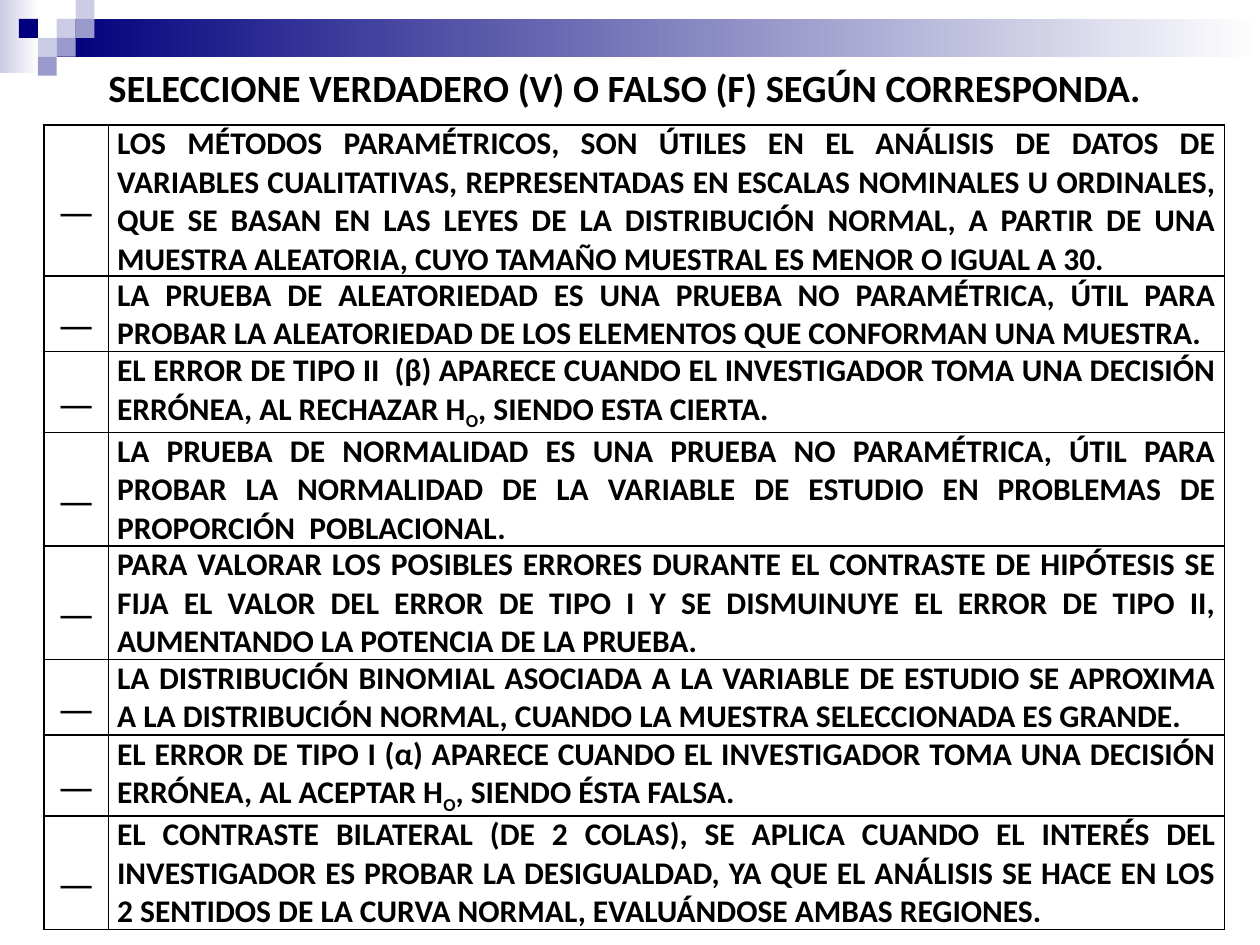
from dataclasses import dataclass

import pptx
import pptx.dml.color
import pptx.enum.shapes
import pptx.enum.text
import pptx.oxml
import pptx.oxml.ns
import pptx.util

Inches = pptx.util.Inches
Pt = pptx.util.Pt
ALIGN = pptx.enum.text.PP_ALIGN
MIDDLE = pptx.enum.text.MSO_ANCHOR.MIDDLE


@dataclass(frozen=True)
class Theme:
    font: str = "Calibri"
    ink: str = "000000"
    paper: str = "FFFFFF"
    navy: str = "00007D"
    mid: str = "9999CC"
    pale: str = "CCCCE6"
    title: int = 22
    body: int = 18


THEME = Theme()
TITLE = "SELECCIONE VERDADERO (V) O FALSO (F) SEGÚN CORRESPONDA."
MARK = "__"
# Lines of text in the row, then the statement as (normal, subscript, normal, ...)
ITEMS = [
    (4, ["LOS MÉTODOS PARAMÉTRICOS, SON ÚTILES EN EL ANÁLISIS DE DATOS DE "
         "VARIABLES CUALITATIVAS, REPRESENTADAS EN ESCALAS NOMINALES U "
         "ORDINALES, QUE SE BASAN EN LAS LEYES DE LA DISTRIBUCIÓN NORMAL, "
         "A PARTIR DE UNA MUESTRA ALEATORIA, CUYO TAMAÑO MUESTRAL ES MENOR "
         "O IGUAL A 30."]),
    (2, ["LA PRUEBA DE ALEATORIEDAD ES UNA PRUEBA NO PARAMÉTRICA, ÚTIL PARA "
         "PROBAR LA ALEATORIEDAD DE LOS ELEMENTOS QUE CONFORMAN UNA MUESTRA."]),
    (2, ["EL ERROR DE TIPO II  (β) APARECE CUANDO EL INVESTIGADOR TOMA UNA "
         "DECISIÓN ERRÓNEA, AL RECHAZAR H", "O", ", SIENDO ESTA CIERTA."]),
    (3, ["LA PRUEBA DE NORMALIDAD ES UNA PRUEBA NO PARAMÉTRICA, ÚTIL PARA "
         "PROBAR LA NORMALIDAD DE LA VARIABLE DE ESTUDIO EN PROBLEMAS DE "
         "PROPORCIÓN  POBLACIONAL."]),
    (3, ["PARA VALORAR LOS POSIBLES ERRORES DURANTE EL CONTRASTE DE HIPÓTESIS "
         "SE FIJA EL VALOR DEL ERROR DE TIPO I Y SE DISMUINUYE EL ERROR DE "
         "TIPO II, AUMENTANDO LA POTENCIA DE LA PRUEBA."]),
    (2, ["LA DISTRIBUCIÓN BINOMIAL ASOCIADA A LA VARIABLE DE ESTUDIO SE "
         "APROXIMA A LA DISTRIBUCIÓN NORMAL, CUANDO LA MUESTRA SELECCIONADA "
         "ES GRANDE."]),
    (2, ["EL ERROR DE TIPO I (α) APARECE CUANDO EL INVESTIGADOR TOMA UNA "
         "DECISIÓN ERRÓNEA, AL ACEPTAR H", "O", ", SIENDO ÉSTA FALSA."]),
    (3, ["EL CONTRASTE BILATERAL (DE 2 COLAS), SE APLICA CUANDO EL INTERÉS "
         "DEL INVESTIGADOR ES PROBAR LA DESIGUALDAD, YA QUE EL ANÁLISIS SE "
         "HACE EN LOS 2 SENTIDOS DE LA CURVA NORMAL, EVALUÁNDOSE AMBAS "
         "REGIONES."]),
]


def color(code):
    return pptx.dml.color.RGBColor.from_string(code)


def style(para, size, align):
    para.alignment = align
    font = para.font
    font.name, font.size, font.bold = THEME.font, Pt(size), True
    font.color.rgb = color(THEME.ink)


def block(slide, box, *tones):
    """Draw a plain rectangle; two tones make a left-to-right gradient."""
    kind = pptx.enum.shapes.MSO_SHAPE.RECTANGLE
    rect = slide.shapes.add_shape(kind, *map(Inches, box))
    rect.shadow.inherit = False
    rect.line.fill.background()
    if len(tones) == 1:
        rect.fill.solid()
        rect.fill.fore_color.rgb = color(tones[0])
        return
    rect.fill.gradient()
    rect.fill.gradient_angle = 0
    for stop, tone in zip(rect.fill.gradient_stops, tones):
        stop.color.rgb = color(tone)


def banner(slide, box):
    """Fading bar with a mosaic of squares at its left end."""
    left, top, width, height = box
    unit = 0.15
    block(slide, (left, top, 0.31, height - 0.02), THEME.pale, THEME.paper)
    block(slide, (left + 3 * unit, top + unit, width - 3 * unit, 2 * unit),
          THEME.navy, THEME.paper)
    tiles = [(3, 1, THEME.pale), (4, 0, THEME.pale), (4, 1, THEME.mid),
             (2, 2, THEME.pale), (1, 1, THEME.navy), (3, 2, THEME.mid),
             (2, 3, THEME.mid)]
    for col, row, tone in tiles:
        block(slide, (left + col * unit, top + row * unit, unit, unit), tone)


def heading(slide, box):
    title = slide.shapes.title
    title.left, title.top, title.width, title.height = map(Inches, box)
    frame = title.text_frame
    frame.text = TITLE
    frame.word_wrap = False
    frame.auto_size = pptx.enum.text.MSO_AUTO_SIZE.SHAPE_TO_FIT_TEXT
    frame.vertical_anchor = MIDDLE
    style(frame.paragraphs[0], THEME.title, ALIGN.LEFT)


def border(cell):
    props = cell._tc.get_or_add_tcPr()
    for spot, side in enumerate("LRTB"):
        props.insert(spot, pptx.oxml.parse_xml(
            f'<a:ln{side} {pptx.oxml.ns.nsdecls("a")} w="{Pt(1)}">'
            f'<a:solidFill><a:srgbClr val="{THEME.ink}"/></a:solidFill>'
            f'</a:ln{side}>'))


def fill(cell, parts, align):
    """Write the parts into a cell, every second one as a subscript."""
    cell.fill.background()
    border(cell)
    cell.vertical_anchor = MIDDLE
    cell.margin_left = cell.margin_right = Inches(0.07)
    cell.margin_top = cell.margin_bottom = 0
    para = cell.text_frame.paragraphs[0]
    style(para, THEME.body, align)
    for spot, part in enumerate(parts):
        run = para.add_run()
        run.text = part
        if spot % 2:
            run._r.get_or_add_rPr().set("baseline", "-25000")
    return para


def quiz(slide, box):
    left, top, width, height = box
    grid = slide.shapes.add_table(len(ITEMS), 2, *map(Inches, box)).table
    grid.first_row = grid.horz_banding = False
    mark = 0.51
    grid.columns[0].width = Inches(mark)
    grid.columns[1].width = Inches(width - mark)
    unit = height / sum(lines for lines, _ in ITEMS)
    for row, (lines, parts) in zip(grid.rows, ITEMS):
        row.height = Inches(lines * unit)
        fill(row.cells[0], [MARK], ALIGN.CENTER).line_spacing = 1.07
        fill(row.cells[1], parts, ALIGN.JUSTIFY)


def main():
    deck = pptx.Presentation()
    deck.slide_width, deck.slide_height = Inches(10), Inches(7.5)
    slide = deck.slides.add_slide(deck.slide_layouts[5])
    banner(slide, (0, 0, 10, 0.6))
    heading(slide, (0.76, 0.46, 8.5, 0.47))
    quiz(slide, (0.35, 0.99, 9.37, 6.3))
    deck.save("out.pptx")


if __name__ == "__main__":
    main()
